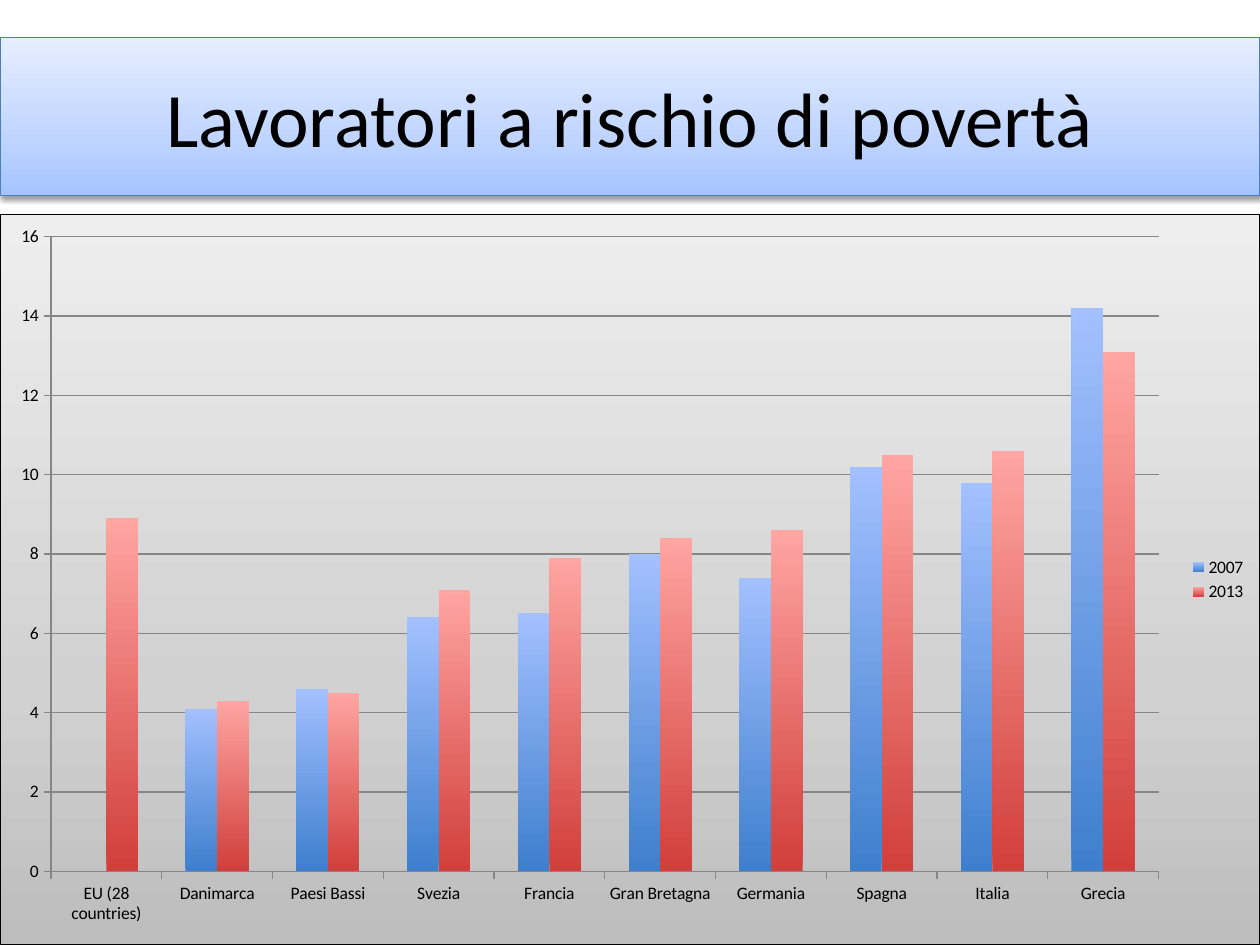
from dataclasses import dataclass

from lxml import etree
from pptx import Presentation
from pptx.chart.data import CategoryChartData
from pptx.dml.color import RGBColor
from pptx.enum.chart import XL_CHART_TYPE, XL_LEGEND_POSITION, XL_TICK_MARK
from pptx.enum.text import MSO_ANCHOR, PP_ALIGN
from pptx.oxml import parse_xml
from pptx.oxml.ns import nsdecls, qn
from pptx.util import Pt

COLUMNS = XL_CHART_TYPE.COLUMN_CLUSTERED
RIGHT = XL_LEGEND_POSITION.RIGHT
OUT = XL_TICK_MARK.OUTSIDE
MIDDLE = MSO_ANCHOR.MIDDLE
CENTER = PP_ALIGN.CENTER


@dataclass(frozen=True)
class Theme:
    font: str = "Calibri"
    head: int = 44
    small: int = 10
    ink: str = "000000"
    grid: str = "868686"
    edge: str = "4B7EBC"
    band: tuple = ((0, "A4C4FF"), (35, "BFD4FF"), (100, "E6EEFF"))
    panel: tuple = ((0, "BDBDBD"), (35, "D1D1D1"), (100, "EEEEEE"))
    bars: tuple = (((0, "3E7FCD"), (100, "A3C0FF")),
                   ((0, "D13F3B"), (100, "FFA5A2")))


THEME = Theme()
WIDE, HIGH = 720, 540
TITLE_BOX = (0, 21.6, WIDE, 90)
CHART_BOX = (0, 122.4, WIDE, 417.6)
PLOT = {"x": 0.04, "y": 0.03, "w": 0.88, "h": 0.87}

LANDS = ("EU (28 countries)", "Danimarca", "Paesi Bassi", "Svezia", "Francia",
         "Gran Bretagna", "Germania", "Spagna", "Italia", "Grecia")
RATES = {
    "2007": (0, 4.1, 4.6, 6.4, 6.5, 8, 7.4, 10.2, 9.8, 14.2),
    "2013": (8.9, 4.3, 4.5, 7.1, 7.9, 8.4, 8.6, 10.5, 10.6, 13.1),
}


def style(item, **values):
    for name, value in values.items():
        setattr(item, name, value)


def type_in(font, size):
    style(font, name=THEME.font, size=Pt(size), bold=False)
    font.color.rgb = RGBColor.from_string(THEME.ink)


def shade(props, stops, edge=None):
    """Fill shape properties upward from the first stop, with an optional edge."""
    marks = "".join(f'<a:gs pos="{pos * 1000}"><a:srgbClr val="{color}"/></a:gs>'
                    for pos, color in stops)
    props.append(parse_xml(
        f'<a:gradFill {nsdecls("a")} rotWithShape="1"><a:gsLst>{marks}</a:gsLst>'
        '<a:lin ang="16200000" scaled="0"/></a:gradFill>'))
    if edge:
        props.append(parse_xml(
            f'<a:ln {nsdecls("a")} w="{Pt(0.75)}"><a:solidFill>'
            f'<a:srgbClr val="{edge}"/></a:solidFill></a:ln>'))


def add_title(slide, box):
    title = slide.shapes.title
    style(title, **dict(zip(("left", "top", "width", "height"), map(Pt, box))))
    shade(title.element.spPr, THEME.band, THEME.edge)
    title.element.spPr.append(parse_xml(
        f'<a:effectLst {nsdecls("a")}><a:outerShdw blurRad="{Pt(3.1)}" '
        f'dist="{Pt(1.6)}" dir="5400000" rotWithShape="0"><a:srgbClr val="000000">'
        '<a:alpha val="38000"/></a:srgbClr></a:outerShdw></a:effectLst>'))
    frame = title.text_frame
    frame.text = "Lavoratori a rischio di povertà"
    frame.vertical_anchor = MIDDLE
    line = frame.paragraphs[0]
    line.alignment = CENTER
    type_in(line.runs[0].font, THEME.head)


def place_plot(area):
    """Fix the inner plot area as fractions of the chart."""
    for old in area.findall(qn("c:layout")):
        area.remove(old)
    layout = parse_xml(f'<c:layout {nsdecls("c")}><c:manualLayout/></c:layout>')
    rules = {"layoutTarget": "inner", "xMode": "edge", "yMode": "edge", **PLOT}
    for name, value in rules.items():
        etree.SubElement(layout[0], qn(f"c:{name}"), val=str(value))
    area.insert(0, layout)


def add_chart(slide, box):
    data = CategoryChartData()
    data.categories = LANDS
    for year, rates in RATES.items():
        data.add_series(year, rates)
    chart = slide.shapes.add_chart(COLUMNS, *map(Pt, box), data).chart
    style(chart, has_title=False, has_legend=True)
    style(chart.legend, position=RIGHT, include_in_layout=False)
    type_in(chart.font, THEME.small)

    root = chart.element
    panel = parse_xml(f'<c:spPr {nsdecls("a", "c")}/>')
    shade(panel, THEME.panel, THEME.ink)
    root.find(qn("c:chart")).addnext(panel)
    place_plot(root.find(".//" + qn("c:plotArea")))

    plot = chart.plots[0]
    style(plot, gap_width=150, overlap=0, vary_by_categories=False)
    for series, stops in zip(plot.series, THEME.bars):
        shade(series.format.element.get_or_add_spPr()
              if hasattr(series.format, "element")
              else series._element.get_or_add_spPr(), stops)

    cats, vals = chart.category_axis, chart.value_axis
    style(vals, minimum_scale=0, maximum_scale=16, major_unit=2,
          has_major_gridlines=True)
    for axis in (cats, vals):
        axis.major_tick_mark = OUT
    for part in (cats, vals, vals.major_gridlines):
        line = part.format.line
        line.width = Pt(0.75)
        line.color.rgb = RGBColor.from_string(THEME.grid)


def main():
    deck = Presentation()
    style(deck, slide_width=Pt(WIDE), slide_height=Pt(HIGH))
    slide = deck.slides.add_slide(deck.slide_layouts[5])
    add_title(slide, TITLE_BOX)
    add_chart(slide, CHART_BOX)
    deck.save("out.pptx")


if __name__ == "__main__":
    main()
